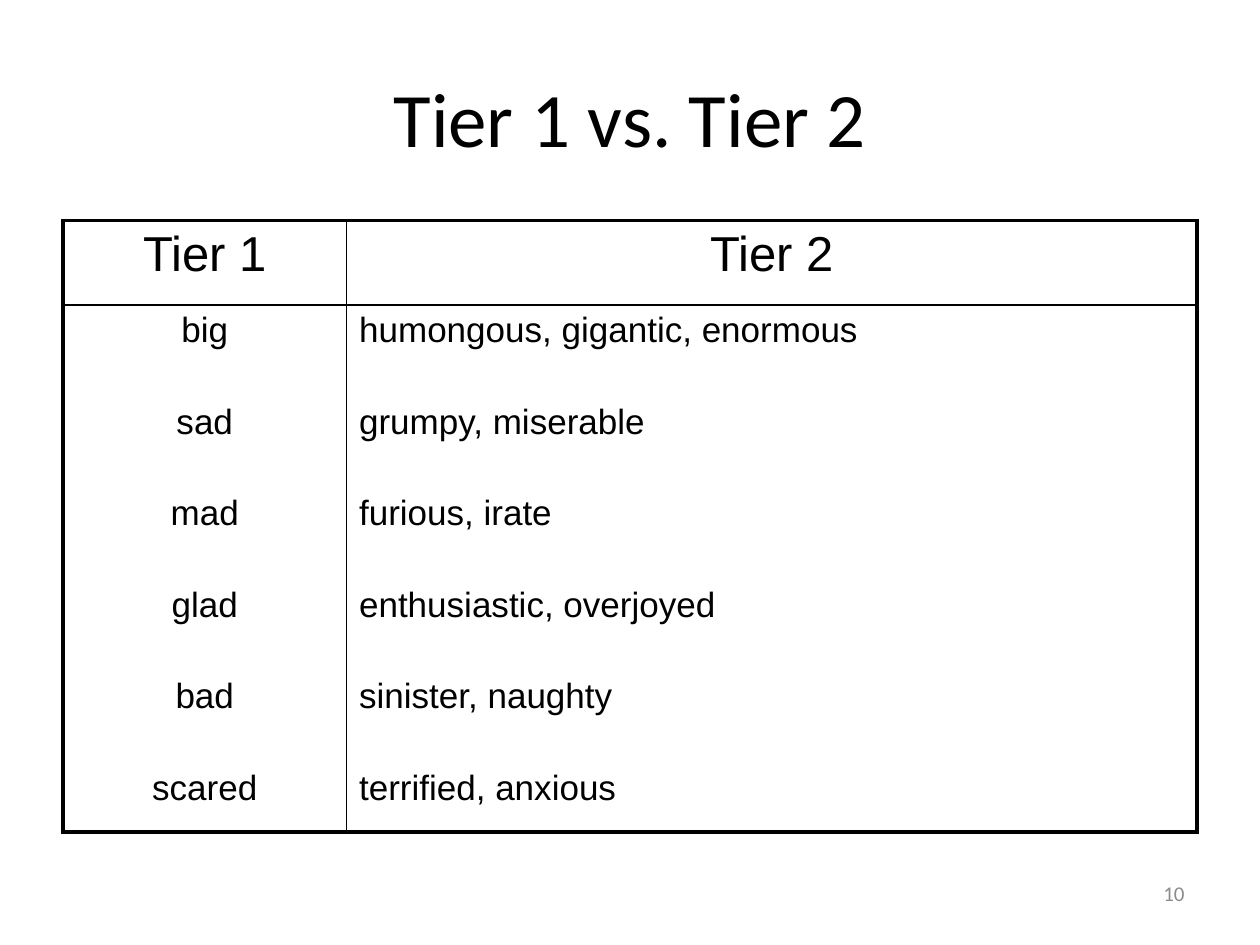
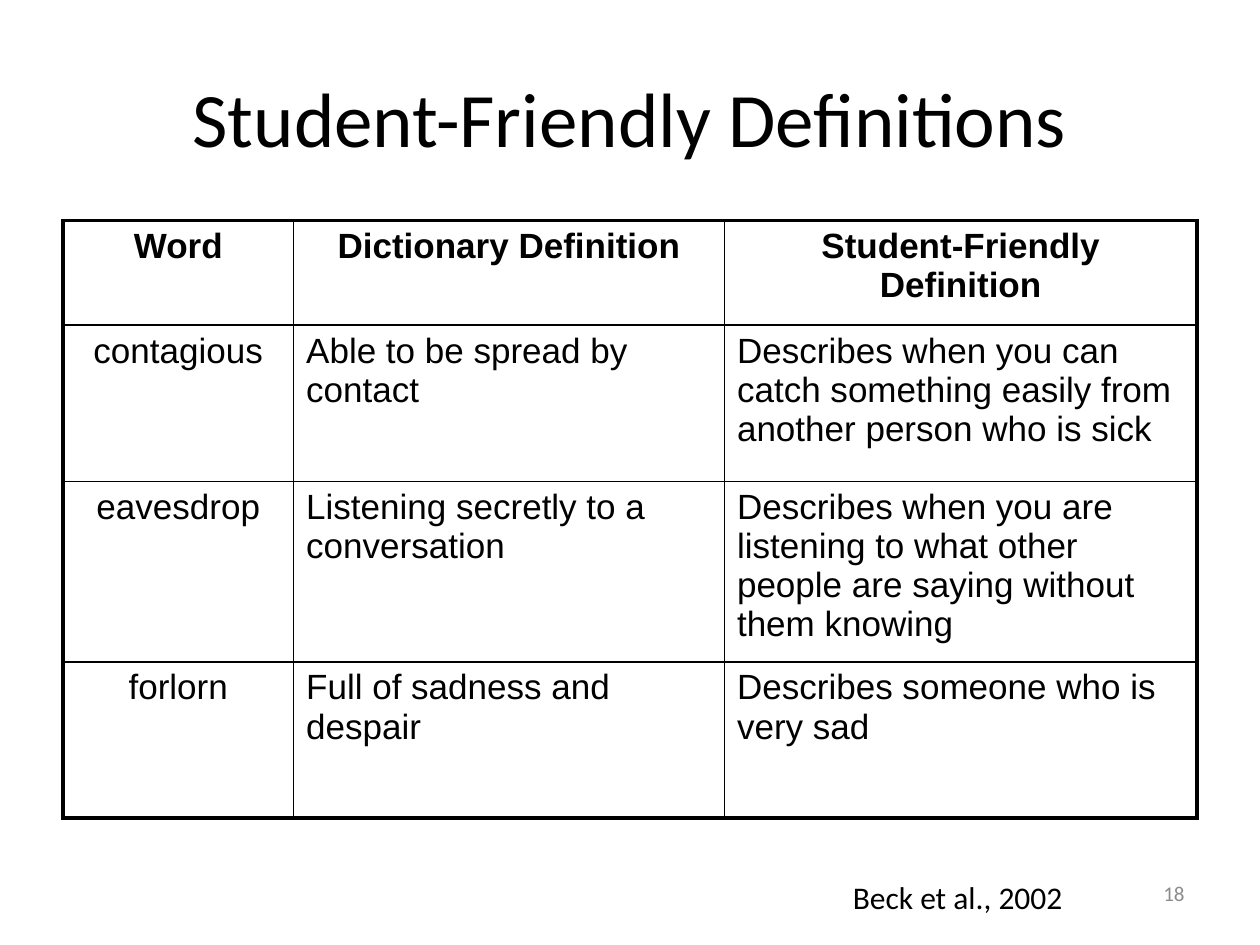
from lxml import etree
from pptx import Presentation
from pptx.dml.color import RGBColor
from pptx.enum.text import MSO_ANCHOR as Anchor, PP_ALIGN as Align
from pptx.oxml.ns import qn
from pptx.util import Inches, Pt

COLORS = {"text": "000000", "border": "000000", "page_number": "8C8C8C"}
TITLE_FONT = "Calibri"
TABLE_FONT = "Arial"
TITLE_ONLY_LAYOUT = 5
OUTER_BORDER, INNER_BORDER = Pt(2.25), Pt(1)
WORD_GAP = Pt(30)

TIERS = [
    ("big", "humongous, gigantic, enormous"),
    ("sad", "grumpy, miserable"),
    ("mad", "furious, irate"),
    ("glad", "enthusiastic, overjoyed"),
    ("bad", "sinister, naughty"),
    ("scared", "terrified, anxious"),
]
TIER_ROWS = [["Tier 1", "Tier 2"], ["\n".join(words) for words in zip(*TIERS)]]

DEFINITION_ROWS = [
    ["Word", "Dictionary Definition", "Student-Friendly Definition"],
    ["contagious", "Able to be spread by contact",
     "Describes when you can catch something easily from another person who is sick"],
    ["eavesdrop", "Listening secretly to a conversation",
     "Describes when you are listening to what other people are saying without them knowing"],
    ["forlorn", "Full of sadness and despair", "Describes someone who is very sad"],
]


def style_paragraph(paragraph, font_name, size, color="text", align=Align.LEFT, bold=False):
    paragraph.alignment = align
    font = paragraph.font
    font.name, font.size, font.bold = font_name, Pt(size), bold
    font.color.rgb = RGBColor.from_string(COLORS[color])


def add_text(slide, text, left, top, width, height, size, **style):
    box = slide.shapes.add_textbox(Inches(left), Inches(top), Inches(width), Inches(height))
    frame = box.text_frame
    frame.word_wrap = True
    frame.text = text
    style_paragraph(frame.paragraphs[0], TITLE_FONT, size, **style)
    return frame


def add_titled_slide(presentation, title_text, page_number):
    slide = presentation.slides.add_slide(presentation.slide_layouts[TITLE_ONLY_LAYOUT])
    title = slide.shapes.title
    title.left, title.top = Inches(0.5), Inches(0.3)
    title.width, title.height = Inches(9), Inches(1.25)
    title.text_frame.text = title_text
    title.text_frame.vertical_anchor = Anchor.MIDDLE
    style_paragraph(title.text_frame.paragraphs[0], TITLE_FONT, 44, align=Align.CENTER)
    number = add_text(slide, page_number, 7.17, 6.83, 2.33, 0.52, 12,
                      color="page_number", align=Align.RIGHT)
    number.vertical_anchor = Anchor.MIDDLE
    return slide


def set_borders(cell, outer_sides):
    """Draw heavy lines on the outer sides and thin ones on the others."""
    properties = cell._tc.get_or_add_tcPr()
    for side in "LRTB":
        width = OUTER_BORDER if side in outer_sides else INNER_BORDER
        line = etree.SubElement(properties, qn(f"a:ln{side}"), w=str(int(width)))
        fill = etree.SubElement(line, qn("a:solidFill"))
        etree.SubElement(fill, qn("a:srgbClr"), val=COLORS["border"])


def add_word_table(slide, rows, column_widths, row_heights, header_size, header_bold=False):
    """Add a table with a centred header row and a centred first column."""
    last_row, last_column = len(rows) - 1, len(column_widths) - 1
    table = slide.shapes.add_table(
        len(rows), len(column_widths), Inches(0.5), Inches(1.75),
        Inches(sum(column_widths)), Inches(sum(row_heights))).table
    table.first_row = table.horz_banding = False
    for column, width in zip(table.columns, column_widths):
        column.width = Inches(width)
    for row, height in zip(table.rows, row_heights):
        row.height = Inches(height)

    for r, texts in enumerate(rows):
        for c, text in enumerate(texts):
            cell = table.cell(r, c)
            edges = {"L": c == 0, "R": c == last_column, "T": r == 0, "B": r == last_row}
            set_borders(cell, [side for side, is_outer in edges.items() if is_outer])
            cell.fill.background()
            cell.text = text
            is_header = r == 0
            for index, paragraph in enumerate(cell.text_frame.paragraphs):
                style_paragraph(paragraph, TABLE_FONT, header_size if is_header else 20,
                                align=Align.CENTER if is_header or c == 0 else Align.LEFT,
                                bold=is_header and header_bold)
                if index:
                    paragraph.space_before = WORD_GAP


def main():
    presentation = Presentation()
    presentation.slide_width, presentation.slide_height = Inches(10), Inches(7.5)

    tiers = add_titled_slide(presentation, "Tier 1 vs. Tier 2", "10")
    add_word_table(tiers, TIER_ROWS, [2.25, 6.75], [0.67, 4.06], header_size=28)

    definitions = add_titled_slide(presentation, "Student-Friendly Definitions", "18")
    add_word_table(definitions, DEFINITION_ROWS, [1.83, 3.42, 3.75],
                   [0.83, 1.24, 1.34, 1.24], header_size=20, header_bold=True)
    add_text(definitions, "Beck et al., 2002", 6.67, 6.92, 3.33, 0.4, 18)

    presentation.save("out.pptx")


if __name__ == "__main__":
    main()
